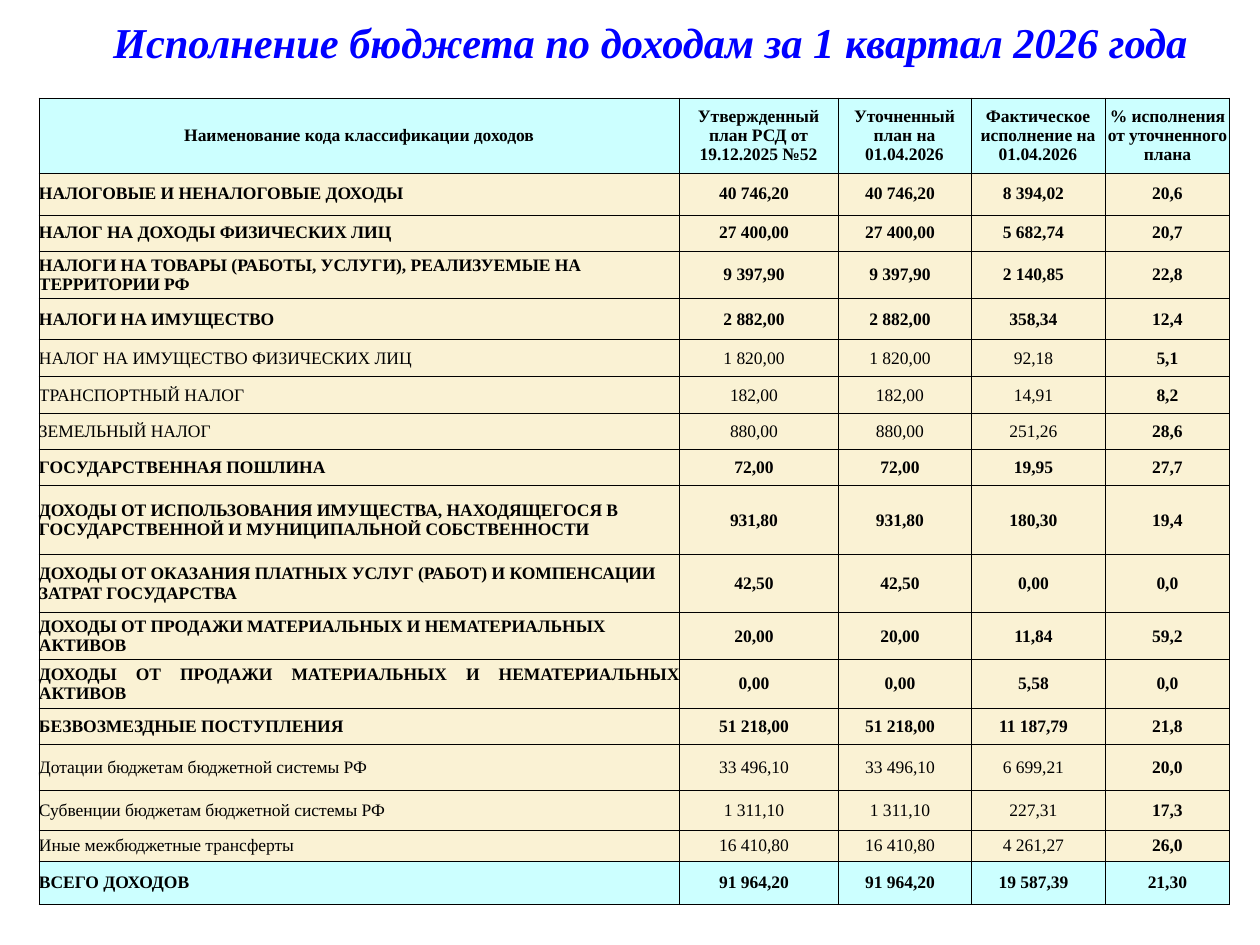
"""Build a one-slide table of budget revenue for the first quarter of 2026."""
import pptx
import pptx.dml.color
import pptx.enum.text
import pptx.oxml
import pptx.oxml.ns
import pptx.util

TITLE = "Исполнение бюджета по доходам за 1 квартал 2026 года"
HEADERS = (
    "Наименование кода классификации доходов",
    "Утвержденный план РСД от 19.12.2025 №52",
    "Уточненный план на 01.04.2026",
    "Фактическое исполнение на 01.04.2026",
    "% исполнения от уточненного плана",
)
REVENUES = (
    ("НАЛОГОВЫЕ И НЕНАЛОГОВЫЕ ДОХОДЫ", "40 746,20", "40 746,20", "8 394,02", "20,6"),
    ("НАЛОГ НА ДОХОДЫ ФИЗИЧЕСКИХ ЛИЦ", "27 400,00", "27 400,00", "5 682,74", "20,7"),
    ("НАЛОГИ НА ТОВАРЫ (РАБОТЫ, УСЛУГИ), РЕАЛИЗУЕМЫЕ НА ТЕРРИТОРИИ РФ",
     "9 397,90", "9 397,90", "2 140,85", "22,8"),
    ("НАЛОГИ НА ИМУЩЕСТВО", "2 882,00", "2 882,00", "358,34", "12,4"),
    ("НАЛОГ НА ИМУЩЕСТВО ФИЗИЧЕСКИХ ЛИЦ", "1 820,00", "1 820,00", "92,18", "5,1"),
    ("ТРАНСПОРТНЫЙ НАЛОГ", "182,00", "182,00", "14,91", "8,2"),
    ("ЗЕМЕЛЬНЫЙ НАЛОГ", "880,00", "880,00", "251,26", "28,6"),
    ("ГОСУДАРСТВЕННАЯ ПОШЛИНА", "72,00", "72,00", "19,95", "27,7"),
    ("ДОХОДЫ ОТ ИСПОЛЬЗОВАНИЯ ИМУЩЕСТВА, НАХОДЯЩЕГОСЯ В ГОСУДАРСТВЕННОЙ "
     "И МУНИЦИПАЛЬНОЙ СОБСТВЕННОСТИ", "931,80", "931,80", "180,30", "19,4"),
    ("ДОХОДЫ ОТ ОКАЗАНИЯ ПЛАТНЫХ УСЛУГ (РАБОТ) И КОМПЕНСАЦИИ ЗАТРАТ ГОСУДАРСТВА",
     "42,50", "42,50", "0,00", "0,0"),
    ("ДОХОДЫ ОТ ПРОДАЖИ МАТЕРИАЛЬНЫХ И НЕМАТЕРИАЛЬНЫХ АКТИВОВ",
     "20,00", "20,00", "11,84", "59,2"),
    ("ДОХОДЫ ОТ ПРОДАЖИ МАТЕРИАЛЬНЫХ И НЕМАТЕРИАЛЬНЫХ АКТИВОВ",
     "0,00", "0,00", "5,58", "0,0"),
    ("БЕЗВОЗМЕЗДНЫЕ ПОСТУПЛЕНИЯ", "51 218,00", "51 218,00", "11 187,79", "21,8"),
    ("Дотации бюджетам бюджетной системы РФ", "33 496,10", "33 496,10", "6 699,21", "20,0"),
    ("Субвенции бюджетам бюджетной системы РФ", "1 311,10", "1 311,10", "227,31", "17,3"),
    ("Иные межбюджетные трансферты", "16 410,80", "16 410,80", "4 261,27", "26,0"),
    ("ВСЕГО ДОХОДОВ", "91 964,20", "91 964,20", "19 587,39", "21,30"),
)
DETAIL_ROWS = {5, 6, 7, 14, 15, 16}
JUSTIFIED_ROWS = {6, 12}
COLUMN_WIDTHS = (640, 159, 133, 134, 125)
ROW_HEIGHTS = (75, 42, 36, 48, 41, 37, 37, 36, 36, 69, 58, 47, 49, 36, 46, 40, 31, 43)
THEME = {
    "font": "Times New Roman", "title_size": 24.3, "cell_size": 10,
    "title": "0000FF", "text": "000000", "page": "FFFFFF",
    "accent": "CCFFFF", "body": "FAF2D4", "border": "000000", "border_width": 0.5,
}
ALIGN = pptx.enum.text.PP_ALIGN
MIDDLE = pptx.enum.text.MSO_ANCHOR.MIDDLE


def px(length):
    return pptx.util.Emu(round(length * 914400 / 126))


def rgb(name):
    return pptx.dml.color.RGBColor.from_string(THEME[name])


def write(frame, text, size, color="text", bold=True, italic=False,
          align=ALIGN.CENTER, spacing=None):
    para = frame.paragraphs[0]
    para.alignment = align
    para.line_spacing = spacing
    span = para.add_run()
    span.text = text
    span.font.name = THEME["font"]
    span.font.size = pptx.util.Pt(size)
    span.font.bold = bold
    span.font.italic = italic
    span.font.color.rgb = rgb(color)


def set_margins(target, left=0, right=0):
    target.margin_left, target.margin_right = px(left), px(right)
    target.margin_top = target.margin_bottom = 0
    target.vertical_anchor = MIDDLE


def add_borders(cell):
    properties = cell._tc.get_or_add_tcPr()
    width = pptx.util.Pt(THEME["border_width"])
    for side in "LRTB":
        properties.append(pptx.oxml.parse_xml(
            f'<a:ln{side} {pptx.oxml.ns.nsdecls("a")} w="{width}"><a:solidFill>'
            f'<a:srgbClr val="{THEME["border"]}"/></a:solidFill></a:ln{side}>'))


def add_title(page):
    box = page.shapes.title
    box.left, box.top, box.width, box.height = px(20), px(10), px(1221), px(69)
    box.fill.solid()
    box.fill.fore_color.rgb = rgb("page")
    frame = box.text_frame
    frame.word_wrap = True
    frame.auto_size = pptx.enum.text.MSO_AUTO_SIZE.NONE
    set_margins(frame, left=40)
    write(frame, TITLE, THEME["title_size"], color="title", italic=True, spacing=0.9)


def add_revenue_table(page):
    rows = (HEADERS,) + REVENUES
    table = page.shapes.add_table(
        len(rows), len(HEADERS), px(39), px(98),
        px(sum(COLUMN_WIDTHS)), px(sum(ROW_HEIGHTS))).table
    table.first_row = table.horz_banding = False
    for column, width in zip(table.columns, COLUMN_WIDTHS):
        column.width = px(width)
    for row, height in zip(table.rows, ROW_HEIGHTS):
        row.height = px(height)

    last_row, last_column = len(rows) - 1, len(HEADERS) - 1
    for row_index, values in enumerate(rows):
        for column_index, text in enumerate(values):
            cell = table.cell(row_index, column_index)
            is_amount = row_index > 0 and 0 < column_index < last_column
            set_margins(cell, right=9 if is_amount else 0)
            add_borders(cell)
            cell.fill.solid()
            cell.fill.fore_color.rgb = rgb("accent" if row_index in (0, last_row) else "body")
            align = ALIGN.CENTER
            if row_index > 0 and column_index == 0:
                align = ALIGN.JUSTIFY if row_index in JUSTIFIED_ROWS else ALIGN.LEFT
            bold = row_index not in DETAIL_ROWS or column_index == last_column
            write(cell.text_frame, text, THEME["cell_size"], bold=bold, align=align)


def main():
    deck = pptx.Presentation()
    deck.slide_width, deck.slide_height = px(1260), px(945)
    page = deck.slides.add_slide(deck.slide_layouts[5])
    add_title(page)
    add_revenue_table(page)
    deck.save("out.pptx")


if __name__ == "__main__":
    main()
